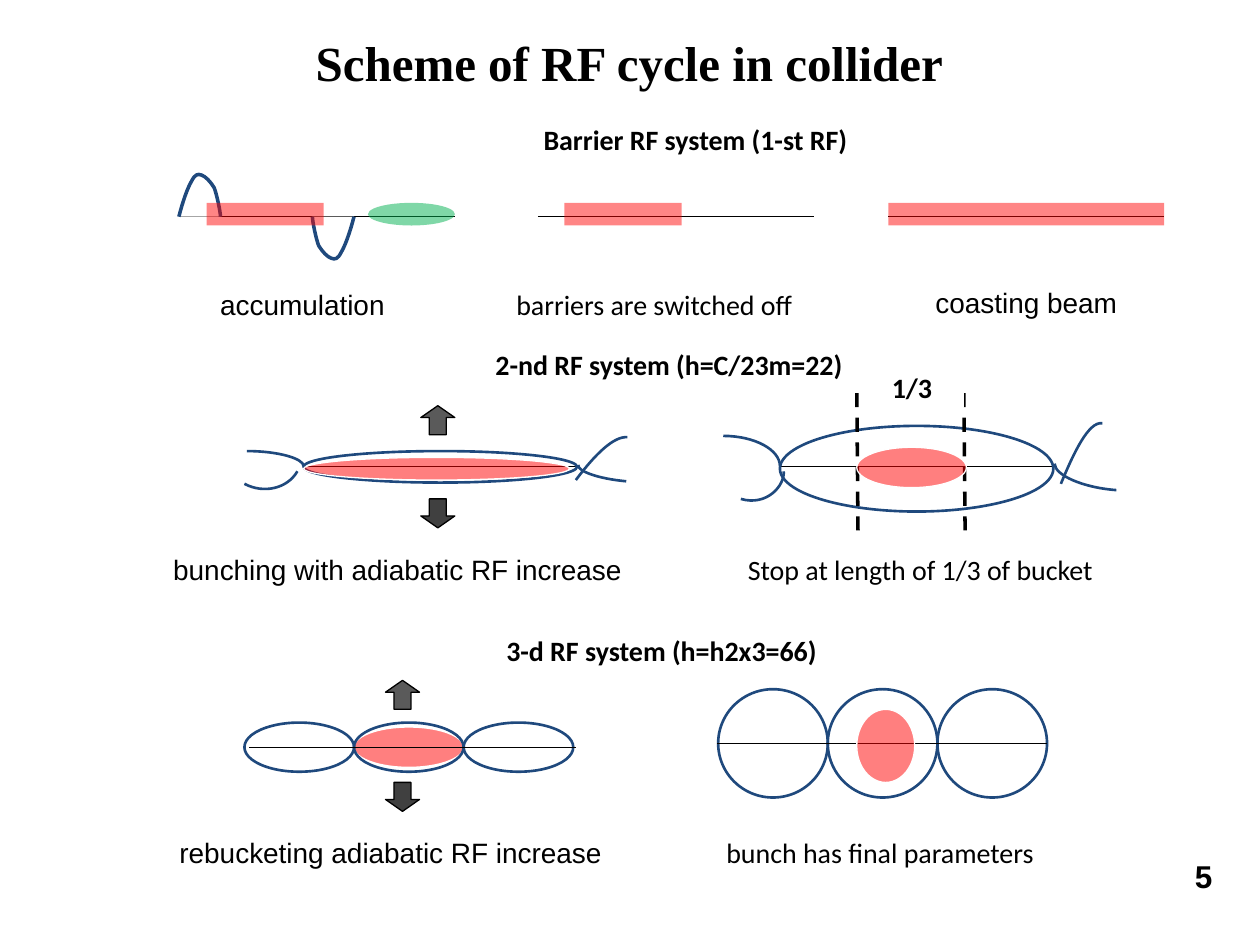
from lxml import etree
from pptx import Presentation
from pptx.dml.color import RGBColor
from pptx.enum.dml import MSO_LINE
from pptx.enum.shapes import MSO_CONNECTOR, MSO_SHAPE
from pptx.enum.text import MSO_ANCHOR, PP_ALIGN
from pptx.oxml.ns import qn
from pptx.util import Inches, Pt

RECT, OVAL = MSO_SHAPE.RECTANGLE, MSO_SHAPE.OVAL
UP, DOWN = MSO_SHAPE.UP_ARROW, MSO_SHAPE.DOWN_ARROW
STRAIGHT, DASH = MSO_CONNECTOR.STRAIGHT, MSO_LINE.DASH
LEFT, MID, RIGHT = PP_ALIGN.LEFT, PP_ALIGN.CENTER, PP_ALIGN.RIGHT
TOP = MSO_ANCHOR.TOP

BLACK = RGBColor(0, 0, 0)
WHITE = RGBColor(0xFF, 0xFF, 0xFF)
NAVY = RGBColor(0x1F, 0x49, 0x7D)
RED = RGBColor(0xFF, 0, 0)
GREEN = RGBColor(0, 0xB0, 0x50)
GREY = RGBColor(0x5A, 0x5A, 0x5A)
DARK = RGBColor(0x40, 0x40, 0x40)

PITCH = 0.87
WAVE = [(0, 0), (0.03, -0.12), (0.07, -0.23), (0.1, -0.28), (0.13, -0.34),
        (0.15, -0.34), (0.18, -0.33), (0.21, -0.32), (0.25, -0.28),
        (0.28, -0.23), (0.3, -0.18), (0.33, -0.04), (0.33, 0)]
THIN_TAILS = [
    [(-0.45, -0.12), (-0.2, -0.12), (0, -0.06), (0, 0)],
    [(2.56, 0.12), (2.34, 0.1), (2.17, 0.04), (2.18, -0.01)],
    [(-0.05, 0.04), (-0.13, 0.18), (-0.32, 0.22), (-0.47, 0.14)],
    [(2.16, 0.11), (2.31, -0.09), (2.46, -0.24), (2.57, -0.23)]]
WIDE_TAILS = [
    [(-0.45, -0.24), (-0.2, -0.24), (0, -0.13), (0, 0)],
    [(2.67, 0.19), (2.4, 0.17), (2.18, 0.07), (2.18, -0.02)],
    [(0.03, 0.04), (0.04, 0.15), (-0.1, 0.32), (-0.31, 0.26)],
    [(2.23, 0.14), (2.33, -0.1), (2.45, -0.36), (2.56, -0.34)]]


def paint(shape, fill=None, line=None, width=0.75, alpha=None):
    """Set fill, opacity and outline of a shape."""
    shape.shadow.inherit = False
    if fill is None:
        shape.fill.background()
    else:
        shape.fill.solid()
        shape.fill.fore_color.rgb = fill
    if alpha:
        tone = shape.fill._xPr.find(qn("a:solidFill"))[0]
        etree.SubElement(tone, qn("a:alpha")).set("val", str(alpha * 1000))
    if line is None:
        shape.line.fill.background()
    else:
        shape.line.color.rgb = line
        shape.line.width = Pt(width)


def form(slide, kind, box, **style):
    """Add a painted preset shape."""
    shape = slide.shapes.add_shape(kind, *map(Inches, box))
    paint(shape, **style)
    return shape


def beam(slide, box, color=RED, edge=WHITE):
    """Add a half-clear oval bunch."""
    form(slide, OVAL, box, fill=color, alpha=50, line=edge)


def rule(slide, x, y, dx, dy=0, width=0.75, dash=None):
    """Add a black line from a point by an offset."""
    ends = map(Inches, (x, y, x + dx, y + dy))
    line = slide.shapes.add_connector(STRAIGHT, *ends)
    line.line.color.rgb = BLACK
    line.line.width = Pt(width)
    if dash:
        line.line.dash_style = dash
    etree.SubElement(line._element.spPr, qn("a:effectLst"))


def curve(slide, x, y, knots, sign=1, fill=None, width=1.5):
    """Draw joined cubic curves through knots about a point."""
    dots = [(Inches(x + sign * dx), Inches(y + sign * dy)) for dx, dy in knots]
    pen = slide.shapes.build_freeform(*dots[0])
    pen.add_line_segments(dots[1:], close=False)
    shape = pen.convert_to_shape()
    track = shape._element.find(".//" + qn("a:path"))
    legs = track.findall(qn("a:lnTo"))
    for i in range(0, len(legs), 3):
        bend = etree.SubElement(track, qn("a:cubicBezTo"))
        for leg in legs[i:i + 3]:
            bend.append(leg[0])
            track.remove(leg)
    paint(shape, fill, NAVY, width)


def write(shape, text, font, size=16, bold=False, align=MID):
    """Fill a shape with one line of black text."""
    frame = shape.text_frame
    frame.word_wrap = True
    frame.vertical_anchor = TOP
    frame.text = text
    para = frame.paragraphs[0]
    para.alignment = align
    para.font.name, para.font.size, para.font.bold = font, Pt(size), bold
    para.font.color.rgb = BLACK


def label(slide, text, box, font="Arial", **style):
    """Add a text box."""
    write(slide.shapes.add_textbox(*map(Inches, box)), text, font, **style)


def head(slide, text, x, y, high):
    """Add the heading of a row."""
    shape = form(slide, RECT, (x, y, 3.82, high), fill=WHITE)
    write(shape, text, "Calibri", bold=True)


def arrows(slide, x, y, gap):
    """Draw an up arrow and a down arrow below it."""
    for kind, top, fill in ((UP, y, GREY), (DOWN, y + gap, DARK)):
        shape = form(slide, kind, (x, top, 0.27, 0.23), fill=fill, line=BLACK)
        shape.adjustments[1] = 0.41


def bucket(slide, x, y, rise, high, tails):
    """Draw a lens bucket with its axis and the tails of its neighbours."""
    rule(slide, x, y, 2.18)
    for tail in tails:
        curve(slide, x, y, tail)
    form(slide, OVAL, (x, y - rise, 2.17, high), line=NAVY, width=1.5)


def chain(slide, x, y, high, start, wide):
    """Draw three touching buckets on an axis."""
    for i in range(3):
        box = (x + i * PITCH, y - high / 2, PITCH, high)
        form(slide, OVAL, box, line=NAVY, width=1.5)
    rule(slide, x + start, y, wide)


def first(slide, x, y):
    """Draw the barrier row."""
    head(slide, "Barrier RF system (1-st RF)", x + 2.19, y, 0.39)
    axis = y + 0.8
    for left in (0, 2.85, 5.63):
        rule(slide, x + left, axis, 2.19)
    for left, sign in ((0, 1), (1.39, -1)):
        curve(slide, x + left, axis, WAVE, sign, WHITE, 2)
    for left, wide in ((0.22, 0.93), (3.06, 0.93), (5.63, 2.19)):
        box = (x + left, axis - 0.11, wide, 0.18)
        form(slide, RECT, box, fill=RED, alpha=48)
    label(slide, "accumulation", (x + 0.14, y + 1.31, 1.68, 0.28))
    beam(slide, (x + 1.5, axis - 0.11, 0.69, 0.18), GREEN, None)
    label(slide, "barriers are switched off", (x + 2.58, y + 1.31, 2.7, 0.24),
          "Calibri", align=LEFT)
    label(slide, "coasting beam", (x + 5.86, y + 1.3, 1.73, 0.25))


def second(slide, x, y):
    """Draw the bunching row."""
    head(slide, "2-nd RF system (h=C/23m=22)", x + 2.18, y, 0.29)
    axis = y + 0.99
    bucket(slide, x + 1.19, axis, 0.12, 0.25, THIN_TAILS)
    bucket(slide, x + 4.97, axis, 0.32, 0.68, WIDE_TAILS)
    beam(slide, (x + 1.19, axis - 0.07, 2.11, 0.18))
    arrows(slide, x + 2.12, y + 0.51, 0.74)
    for left in (5.58, 6.43):
        rule(slide, x + left, y + 0.41, 0.01, 1.13, width=2, dash=DASH)
    part = form(slide, RECT, (x + 5.76, y + 0.18, 0.67, 0.34), fill=WHITE, line=WHITE)
    write(part, "1/3", "Calibri", bold=True, align=LEFT)
    beam(slide, (x + 5.58, axis - 0.15, 0.87, 0.32))
    label(slide, "bunching with adiabatic RF increase", (x, y + 1.63, 3.87, 0.34))
    label(slide, "Stop at length of 1/3 of bucket",
          (x + 4.52, y + 1.63, 3.13, 0.24), "Calibri")


def third(slide, x, y):
    """Draw the rebucketing row."""
    head(slide, "3-d RF system (h=h2x3=66)", x + 2.12, y, 0.26)
    beam(slide, (x + 1.59, y + 0.79, 0.87, 0.32))
    chain(slide, x + 0.72, y + 0.95, 0.39, 0.04, 2.59)
    arrows(slide, x + 1.84, y + 0.42, 0.81)
    chain(slide, x + 4.48, y + 0.92, 0.86, -0.01, 2.62)
    beam(slide, (x + 5.58, y + 0.65, 0.46, 0.58))
    label(slide, "rebucketing adiabatic RF increase", (x, y + 1.6, 3.76, 0.24))
    label(slide, "bunch has final parameters", (x + 4, y + 1.6, 3.53, 0.25), "Calibri")


def main():
    """Build and save the slide."""
    deck = Presentation()
    deck.slide_width, deck.slide_height = Inches(10), Inches(7.5)
    slide = deck.slides.add_slide(deck.slide_layouts[5])
    title = slide.shapes.title
    title.left, title.top = Inches(0.35), Inches(0.21)
    title.width, title.height = Inches(9.29), Inches(0.57)
    write(title, "Scheme of RF cycle in collider", "Times New Roman", 28, True)
    first(slide, 1.42, 0.92)
    second(slide, 1.22, 2.71)
    third(slide, 1.22, 4.98)
    label(slide, "5", (7.39, 6.75, 2.33, 0.52), size=18, bold=True, align=RIGHT)
    deck.save("out.pptx")


if __name__ == "__main__":
    main()
